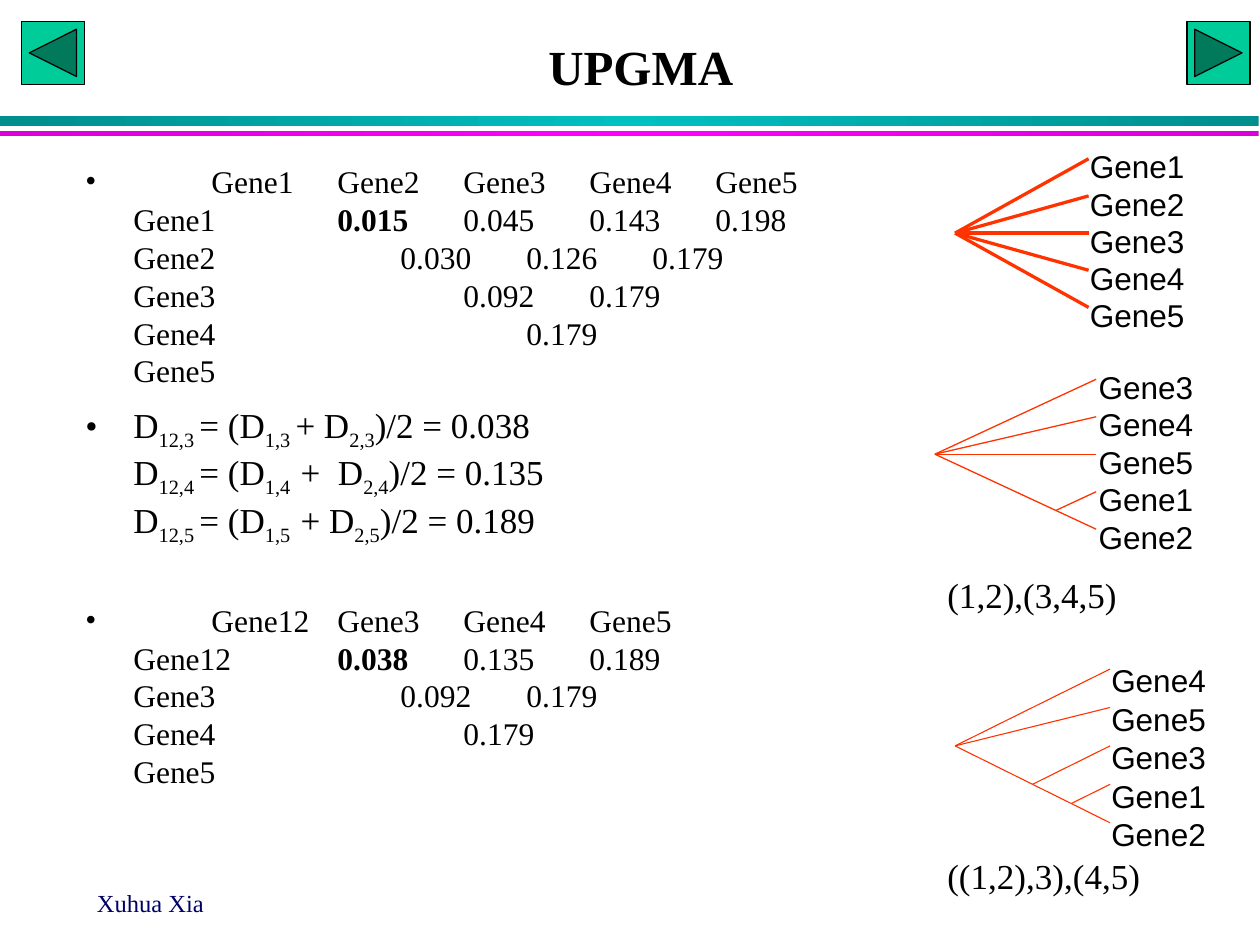
from lxml.etree import SubElement
from pptx import Presentation
from pptx.dml.color import RGBColor
from pptx.enum.shapes import MSO_CONNECTOR, MSO_SHAPE
from pptx.enum.text import MSO_ANCHOR, PP_ALIGN
from pptx.oxml import parse_xml
from pptx.oxml.ns import nsdecls, qn
from pptx.util import Inches, Pt

BLACK = RGBColor(0x00, 0x00, 0x00)
NAVY = RGBColor(0x00, 0x00, 0x66)
GREEN = RGBColor(0x00, 0xCC, 0x99)
BRANCH_RED = RGBColor(0xFF, 0x33, 0x00)
TEAL_EDGE = RGBColor(0x00, 0x8E, 0x8E)
TEAL_CENTRE = RGBColor(0x00, 0xC0, 0xC0)
MAGENTA_EDGE = RGBColor(0xDA, 0x00, 0xDA)
MAGENTA_CENTRE = RGBColor(0xFF, 0x00, 0xFF)
SERIF = "Times New Roman"
SANS = "Arial"

FIRST_MATRIX = (
    ["Gene1", "Gene2", "Gene3", "Gene4", "Gene5"],
    [["0.015", "0.045", "0.143", "0.198"], ["0.030", "0.126", "0.179"],
     ["0.092", "0.179"], ["0.179"], []],
)
SECOND_MATRIX = (
    ["Gene12", "Gene3", "Gene4", "Gene5"],
    [["0.038", "0.135", "0.189"], ["0.092", "0.179"], ["0.179"], []],
)
# Pieces alternate between normal text and subscript.
EQUATIONS = [
    ["D", "12,3 ", "= (D", "1,3 ", "+ D", "2,3", ")/2 = 0.038"],
    ["D", "12,4 ", "= (D", "1,4  ", "+  D", "2,4", ")/2 = 0.135"],
    ["D", "12,5 ", "= (D", "1,5  ", "+ D", "2,5", ")/2 = 0.189"],
]


def add_run(paragraph, text, size, font=SERIF, color=BLACK, bold=False):
    run = paragraph.add_run()
    run.text = text
    run.font.name = font
    run.font.size = Pt(size)
    run.font.bold = bold
    run.font.color.rgb = color
    return run


def add_text_box(slide, left, top, width, height):
    box = slide.shapes.add_textbox(Inches(left), Inches(top), Inches(width), Inches(height))
    box.text_frame.word_wrap = True
    return box.text_frame


def add_line_of_text(slide, text, left, top, width, height, size, color=BLACK):
    frame = add_text_box(slide, left, top, width, height)
    add_run(frame.paragraphs[0], text, size, color=color)


def add_gradient_bar(slide, top, height, edge, centre):
    bar = slide.shapes.add_shape(
        MSO_SHAPE.RECTANGLE, 0, Inches(top), Inches(9.99), Inches(height))
    bar.shadow.inherit = False
    bar.line.fill.background()
    stops = "".join(
        f'<a:gs pos="{position}"><a:srgbClr val="{color}"/></a:gs>'
        for position, color in ((0, edge), (50000, centre), (100000, edge)))
    gradient = parse_xml(
        f'<a:gradFill {nsdecls("a")}><a:gsLst>{stops}</a:gsLst>'
        '<a:lin ang="0" scaled="0"/></a:gradFill>')
    bar.element.spPr.find(qn("a:prstGeom")).addnext(gradient)


def add_navigation_button(slide, kind, left):
    button = slide.shapes.add_shape(
        kind, Inches(left), Inches(0.17), Inches(0.5), Inches(0.5))
    button.shadow.inherit = False
    button.fill.solid()
    button.fill.fore_color.rgb = GREEN
    button.line.color.rgb = BLACK
    button.line.width = Pt(0.75)


def format_title(slide, text):
    title = slide.shapes.title
    title.left, title.top = Inches(0.42), Inches(0.17)
    title.width, title.height = Inches(9.33), Inches(0.71)
    title.text_frame.vertical_anchor = MSO_ANCHOR.MIDDLE
    paragraph = title.text_frame.paragraphs[0]
    paragraph.alignment = PP_ALIGN.CENTER
    add_run(paragraph, text, 28, bold=True)


def format_bullet(paragraph, space_before):
    paragraph.space_before = Pt(space_before)
    properties = paragraph._p.get_or_add_pPr()
    properties.set("marL", str(Inches(0.38)))
    properties.set("indent", str(-Inches(0.38)))
    SubElement(properties, qn("a:buFont"), typeface=SERIF)
    SubElement(properties, qn("a:buChar"), char="•")


def add_distance_matrix(paragraph, genes, rows):
    """Write an upper triangle on tab stops, with its smallest (first) value in bold."""
    add_run(paragraph, "\t\t" + "\t".join(genes), 18)
    for index, (gene, values) in enumerate(zip(genes, rows)):
        paragraph.add_line_break()
        if index == 0:
            add_run(paragraph, gene + "\t\t", 18)
            add_run(paragraph, values[0], 18, bold=True)
            add_run(paragraph, "\t" + "\t".join(values[1:]), 18)
        else:
            tabs = "\t" * (index + 2) if values else ""
            add_run(paragraph, gene + tabs + "\t".join(values), 18)


def add_equations(paragraph, equations):
    for line, pieces in enumerate(equations):
        if line:
            paragraph.add_line_break()
        for index, piece in enumerate(pieces):
            run = add_run(paragraph, piece, 20)
            if index % 2:
                run.font._element.set("baseline", "-25000")


def add_body(slide):
    frame = add_text_box(slide, 0.58, 1.24, 8.92, 5.43)
    first, equations, second = (
        frame.paragraphs[0], frame.add_paragraph(), frame.add_paragraph())
    for paragraph, space_before in ((first, 7.2), (equations, 8), (second, 31)):
        format_bullet(paragraph, space_before)
    add_distance_matrix(first, *FIRST_MATRIX)
    add_equations(equations, EQUATIONS)
    add_distance_matrix(second, *SECOND_MATRIX)


def add_branch(slide, start, end, width):
    branch = slide.shapes.add_connector(
        MSO_CONNECTOR.STRAIGHT, *(Inches(value) for value in (*start, *end)))
    branch.line.color.rgb = BRANCH_RED
    branch.line.width = Pt(width)
    SubElement(branch.element.spPr, qn("a:effectLst"))


def add_leaf_label(slide, text, left, top):
    frame = add_text_box(slide, left, top, 0.76, 0.3)
    frame.word_wrap = False
    frame.margin_left = frame.margin_right = frame.margin_top = frame.margin_bottom = 0
    add_run(frame.paragraphs[0], text, 18, SANS)


def count_leaves(node):
    return 1 if isinstance(node, str) else sum(map(count_leaves, node))


def add_tree(slide, tree, root_x, leaf_x, top, bottom, width, label_x, label_rise):
    """Draw nested tuples as a tree: a node sits mid-height, left by its leaf span."""
    span = count_leaves(tree) - 1
    pitch = (bottom - top) / span

    def add_node(node, first):
        last = first + count_leaves(node) - 1
        x = leaf_x - (leaf_x - root_x) * (last - first) / span
        y = top + pitch * (first + last) / 2
        if isinstance(node, str):
            add_leaf_label(slide, node, label_x, y - label_rise)
        else:
            for child in node:
                add_branch(slide, add_node(child, first), (x, y), width)
                first += count_leaves(child)
        return x, y

    add_node(tree, 0)


def main():
    presentation = Presentation()
    presentation.slide_width, presentation.slide_height = Inches(10), Inches(7.5)
    slide = presentation.slides.add_slide(presentation.slide_layouts[5])

    add_gradient_bar(slide, 0.92, 0.08, TEAL_EDGE, TEAL_CENTRE)
    add_gradient_bar(slide, 1.04, 0.04, MAGENTA_EDGE, MAGENTA_CENTRE)
    add_navigation_button(slide, MSO_SHAPE.ACTION_BUTTON_BACK_OR_PREVIOUS, 0.17)
    add_navigation_button(slide, MSO_SHAPE.ACTION_BUTTON_FORWARD_OR_NEXT, 9.42)
    format_title(slide, "UPGMA")
    add_line_of_text(slide, "Xuhua Xia", 0.67, 7, 2.08, 0.25, 14, NAVY)
    add_body(slide)

    star = ("Gene1", "Gene2", "Gene3", "Gene4", "Gene5")
    one_pair = ("Gene3", "Gene4", "Gene5", ("Gene1", "Gene2"))
    nested_pair = ("Gene4", "Gene5", ("Gene3", ("Gene1", "Gene2")))
    add_tree(slide, star, 7.58, 8.64, 1.26, 2.44, 1.88, 8.65, 0.09)
    add_tree(slide, one_pair, 7.42, 8.7, 3.01, 4.2, 0.75, 8.72, 0.09)
    add_tree(slide, nested_pair, 7.58, 8.81, 5.31, 6.53, 0.63, 8.82, 0.06)
    add_line_of_text(slide, "(1,2),(3,4,5)", 7.42, 4.5, 2.42, 0.43, 20)
    add_line_of_text(slide, "((1,2),3),(4,5)", 7.42, 6.73, 2.42, 0.43, 20)

    presentation.save("out.pptx")


if __name__ == "__main__":
    main()
